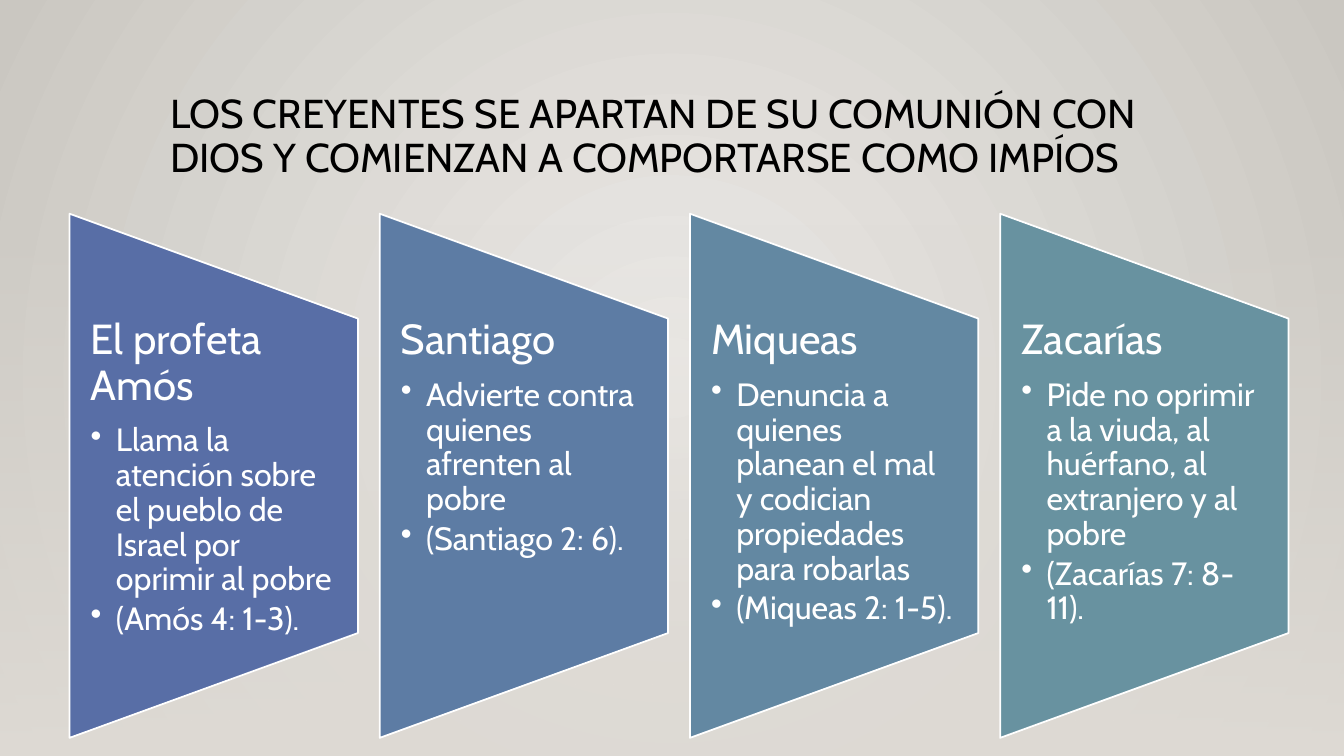
from lxml.etree import SubElement
from pptx import Presentation
from pptx.dml.color import RGBColor
from pptx.enum.shapes import MSO_SHAPE as Preset
from pptx.enum.text import MSO_ANCHOR as Anchor, PP_ALIGN as Align
from pptx.oxml.ns import qn
from pptx.util import Inches, Pt

WIDTH, HEIGHT = 13.33, 7.5
FONT = "Cabin"
BLACK = RGBColor(0x00, 0x00, 0x00)
WHITE = RGBColor(0xFF, 0xFF, 0xFF)
PALE = RGBColor(0xEC, 0xEA, 0xE7)
STONE = RGBColor(0xCA, 0xC7, 0xC1)
SAND = RGBColor(0xDF, 0xDB, 0xD5)
INDIGO = RGBColor(0x58, 0x6E, 0xA6)
BLUE = RGBColor(0x5D, 0x7C, 0xA4)
STEEL = RGBColor(0x63, 0x88, 0xA2)
TEAL = RGBColor(0x68, 0x92, 0xA0)

TITLE = "LOS CREYENTES SE APARTAN DE SU COMUNIÓN CON DIOS Y COMIENZAN A COMPORTARSE COMO IMPÍOS"
PROPHETS = [
    (INDIGO, "El profeta Amós",
     "Llama la atención sobre el pueblo de Israel por oprimir al pobre", "(Amós 4: 1-3)."),
    (BLUE, "Santiago", "Advierte contra quienes afrenten al pobre", "(Santiago 2: 6)."),
    (STEEL, "Miqueas",
     "Denuncia a quienes planean el mal y codician propiedades para robarlas",
     "(Miqueas 2: 1-5)."),
    (TEAL, "Zacarías", "Pide no oprimir a la viuda, al huérfano, al extranjero y al pobre",
     "(Zacarías 7: 8-11)."),
]


class ProphetSlide:
    """Draws the parts of the slide on a grid of equal columns."""

    left, right, column_width = 0.69, 12.78, 2.86
    panel_top, panel_height = 2.12, 5.2
    text_top, text_height = 3.16, 3.12

    def __init__(self, slide, columns):
        self.slide = slide
        self.pitch = (self.right - self.left - self.column_width) / (columns - 1)

    def gradient(self, owner, fill, stops, angle=None):
        fill.solid()
        solid = next(owner.iter(qn("a:solidFill")))
        grad = solid.makeelement(qn("a:gradFill"), {"rotWithShape": "1"})
        stop_list = SubElement(grad, qn("a:gsLst"))
        for position, (color, alpha) in zip((0, 100000), stops):
            stop = SubElement(stop_list, qn("a:gs"), pos=str(position))
            tone = SubElement(stop, qn("a:srgbClr"), val=str(color))
            if alpha < 100:
                SubElement(tone, qn("a:alpha"), val=str(alpha * 1000))
        if angle is None:
            circle = SubElement(grad, qn("a:path"), path="circle")
            SubElement(circle, qn("a:fillToRect"), dict.fromkeys("ltrb", "50000"))
        else:
            SubElement(grad, qn("a:lin"), ang=str(angle * 60000), scaled="0")
        solid.getparent().replace(solid, grad)

    def backdrop(self):
        self.gradient(self.slide.element, self.slide.background.fill,
                      [(PALE, 100), (STONE, 100)])
        top = 2.21
        floor = self.shape(Preset.RECTANGLE, 0, top, WIDTH, HEIGHT - top)
        floor.line.fill.background()
        self.gradient(floor.element, floor.fill, [(SAND, 0), (SAND, 100)], 90)

    def shape(self, preset, *box):
        shape = self.slide.shapes.add_shape(preset, *map(Inches, box))
        shape.shadow.inherit = False
        return shape

    def text_frame(self, box, margin_x, margin_y):
        frame = self.slide.shapes.add_textbox(*map(Inches, box)).text_frame
        frame.word_wrap = True
        frame.vertical_anchor = Anchor.TOP
        frame.margin_left = frame.margin_right = Inches(margin_x)
        frame.margin_top = frame.margin_bottom = Inches(margin_y)
        return frame

    def paragraph(self, paragraph, text, size, color, after=0, bullet=False):
        paragraph.text = text
        paragraph.alignment = Align.LEFT
        paragraph.line_spacing = 0.9
        props = paragraph._p.get_or_add_pPr()
        if after:
            SubElement(SubElement(props, qn("a:spcAft")), qn("a:spcPct"), val=str(after * 1000))
        if bullet:
            paragraph.level = 1
            props.set("marL", str(Inches(0.25)))
            props.set("indent", str(Inches(-0.25)))
            SubElement(props, qn("a:buChar"), char="•")
        for run in paragraph.runs:
            run.font.name = FONT
            run.font.size = Pt(size)
            run.font.color.rgb = color

    def title(self, text):
        frame = self.text_frame((1.59, 0.88, 10.5, 1.15), 0.1, 0.05)
        self.paragraph(frame.paragraphs[0], text, 28.8, BLACK)

    def panel(self, column, color, name, *points):
        left = self.left + column * self.pitch
        inset = (self.panel_height - self.column_width) / 2
        panel = self.shape(Preset.FLOWCHART_MANUAL_OPERATION, left - inset,
                           self.panel_top + inset, self.panel_height, self.column_width)
        panel.rotation = 270
        panel.fill.solid()
        panel.fill.fore_color.rgb = color
        panel.line.color.rgb = WHITE
        panel.line.width = Pt(1.25)
        frame = self.text_frame((left, self.text_top, self.column_width, self.text_height), 0.21, 0)
        self.paragraph(frame.paragraphs[0], name, 30, WHITE, after=35)
        for point in points:
            self.paragraph(frame.add_paragraph(), point, 23, WHITE, after=15, bullet=True)


def main():
    deck = Presentation()
    deck.slide_width, deck.slide_height = Inches(WIDTH), Inches(HEIGHT)
    page = ProphetSlide(deck.slides.add_slide(deck.slide_layouts[6]), len(PROPHETS))
    page.backdrop()
    page.title(TITLE)
    for column, prophet in enumerate(PROPHETS):
        page.panel(column, *prophet)
    deck.save("out.pptx")


if __name__ == "__main__":
    main()
